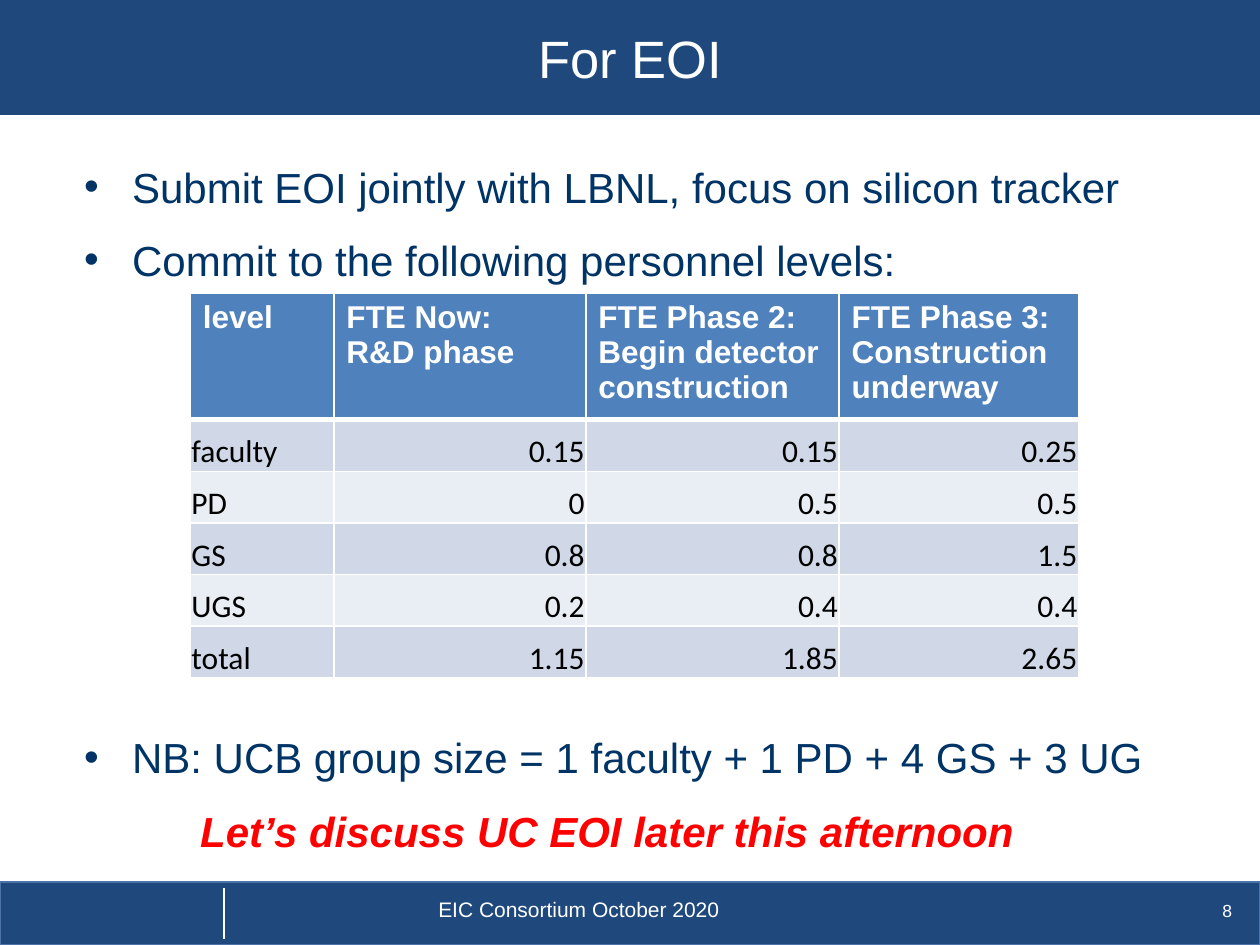
from lxml.etree import SubElement
from pptx import Presentation
from pptx.dml.color import RGBColor
from pptx.enum.shapes import MSO_CONNECTOR, MSO_SHAPE
from pptx.enum.text import MSO_ANCHOR, PP_ALIGN
from pptx.oxml.ns import qn
from pptx.util import Inches, Pt

NAVY = RGBColor(0x1F, 0x49, 0x7D)
EDGE = RGBColor(0x4D, 0x72, 0xA9)
INK = RGBColor(0x00, 0x33, 0x66)
RED = RGBColor(0xFF, 0x00, 0x00)
WHITE = RGBColor(0xFF, 0xFF, 0xFF)
BLACK = RGBColor(0x00, 0x00, 0x00)
HEADER_BLUE = RGBColor(0x4F, 0x81, 0xBD)
BANDS = (RGBColor(0xD0, 0xD8, 0xE8), RGBColor(0xE9, 0xED, 0xF4))

COLUMN_WIDTHS = (1.14, 2, 2.01, 1.9)
HEADERS = (
    ("level",),
    ("FTE Now:", "R&D phase"),
    ("FTE Phase 2:", "Begin detector construction"),
    ("FTE Phase 3:", "Construction underway"),
)
LEVELS = (
    ("faculty", "0.15", "0.15", "0.25"),
    ("PD", "0", "0.5", "0.5"),
    ("GS", "0.8", "0.8", "1.5"),
    ("UGS", "0.2", "0.4", "0.4"),
    ("total", "1.15", "1.85", "2.65"),
)


def add_span(para, text, size, color, font="Arial", bold=False, italic=False):
    span = para.add_run()
    span.text = text
    span.font.name = font
    span.font.size = Pt(size)
    span.font.color.rgb = color
    span.font.bold = bold
    span.font.italic = italic


def add_bar(page, top, height, edge):
    bar = page.shapes.add_shape(
        MSO_SHAPE.RECTANGLE, Inches(0), Inches(top), Inches(10), Inches(height)
    )
    bar.shadow.inherit = False
    bar.fill.solid()
    bar.fill.fore_color.rgb = NAVY
    bar.line.color.rgb = edge
    bar.line.width = Pt(0.75)
    return bar


def add_box(page, left, top, width, height):
    box = page.shapes.add_textbox(
        Inches(left), Inches(top), Inches(width), Inches(height)
    )
    box.text_frame.word_wrap = True
    return box.text_frame


def add_label(page, left, top, width, text, size, align):
    para = add_box(page, left, top, width, 0.3).paragraphs[0]
    para.alignment = align
    add_span(para, text, size, WHITE)


def add_divider(page):
    divider = page.shapes.add_connector(
        MSO_CONNECTOR.STRAIGHT, Inches(1.78), Inches(7.05), Inches(1.78), Inches(7.45)
    )
    divider.line.color.rgb = WHITE
    divider.line.width = Pt(1)
    SubElement(divider._element.spPr, qn("a:effectLst"))


def add_bullet(para, text):
    properties = para._p.get_or_add_pPr()
    properties.set("marL", str(Inches(0.38)))
    properties.set("indent", str(Inches(-0.38)))
    SubElement(properties, qn("a:buFont"), typeface="Arial")
    SubElement(properties, qn("a:buChar"), char="•")
    add_span(para, text, 24, INK)


def add_body(page):
    intro = add_box(page, 0.57, 1.23, 8.99, 1.04)
    add_bullet(intro.paragraphs[0], "Submit EOI jointly with LBNL, focus on silicon tracker")
    para = intro.add_paragraph()
    para.space_before = Pt(13)
    add_bullet(para, "Commit to the following personnel levels:")

    closing = add_box(page, 0.57, 5.76, 8.99, 1.04)
    add_bullet(closing.paragraphs[0], "NB: UCB group size = 1 faculty + 1 PD + 4 GS + 3 UG")
    para = closing.add_paragraph()
    para.space_before = Pt(13)
    para._p.get_or_add_pPr().set("marL", str(Inches(0.92)))
    add_span(para, "Let’s discuss UC EOI later this afternoon", 24, RED, bold=True, italic=True)


def style_cell(cell, fill, bottom_width=1, top_width=1):
    properties = cell._tc.get_or_add_tcPr()
    widths = {"lnL": 1, "lnR": 1, "lnT": top_width, "lnB": bottom_width}
    for side, width in widths.items():
        border = SubElement(properties, qn(f"a:{side}"), w=str(Pt(width)))
        paint = SubElement(border, qn("a:solidFill"))
        SubElement(paint, qn("a:srgbClr"), val=str(WHITE))
    cell.fill.solid()
    cell.fill.fore_color.rgb = fill


def fill_header(cell, lines):
    style_cell(cell, HEADER_BLUE, bottom_width=3)
    frame = cell.text_frame
    for index, line in enumerate(lines):
        para = frame.add_paragraph() if index else frame.paragraphs[0]
        add_span(para, line, 18, WHITE, bold=True)


def fill_value(cell, text, align, fill, top_width):
    style_cell(cell, fill, top_width=top_width)
    cell.vertical_anchor = MSO_ANCHOR.BOTTOM
    cell.margin_left = cell.margin_right = cell.margin_top = Inches(0.01)
    cell.margin_bottom = Inches(0)
    para = cell.text_frame.paragraphs[0]
    para.alignment = align
    add_span(para, text, 18, BLACK, font="Calibri")


def add_levels_table(page):
    table = page.shapes.add_table(
        len(LEVELS) + 1, len(HEADERS),
        Inches(1.51), Inches(2.33), Inches(sum(COLUMN_WIDTHS)), Inches(2.98),
    ).table
    for column, width in zip(table.columns, COLUMN_WIDTHS):
        column.width = Inches(width)
    for index, row in enumerate(table.rows):
        row.height = Inches(0.41 if index else 0.93)
    for column, lines in enumerate(HEADERS):
        fill_header(table.cell(0, column), lines)
    for row, values in enumerate(LEVELS, start=1):
        for column, text in enumerate(values):
            align = PP_ALIGN.RIGHT if column else PP_ALIGN.LEFT
            top_width = 3 if row == 1 else 1
            fill_value(table.cell(row, column), text, align, BANDS[(row - 1) % 2], top_width)


def add_title(page):
    title = add_bar(page, 0, 0.91, NAVY)
    title.text_frame.vertical_anchor = MSO_ANCHOR.MIDDLE
    para = title.text_frame.paragraphs[0]
    para.alignment = PP_ALIGN.CENTER
    add_span(para, "For EOI", 30, WHITE)


def add_footer(page):
    add_bar(page, 7, 0.5, EDGE)
    add_label(page, 9.54, 7.09, 0.4, "8", 10, PP_ALIGN.CENTER)
    add_divider(page)
    add_label(page, 3.38, 7.07, 2.48, "EIC Consortium October 2020", 12, PP_ALIGN.LEFT)


def main():
    deck = Presentation()
    deck.slide_width = Inches(10)
    deck.slide_height = Inches(7.5)
    page = deck.slides.add_slide(deck.slide_layouts[6])
    add_footer(page)
    add_title(page)
    add_body(page)
    add_levels_table(page)
    deck.save("out.pptx")


if __name__ == "__main__":
    main()
